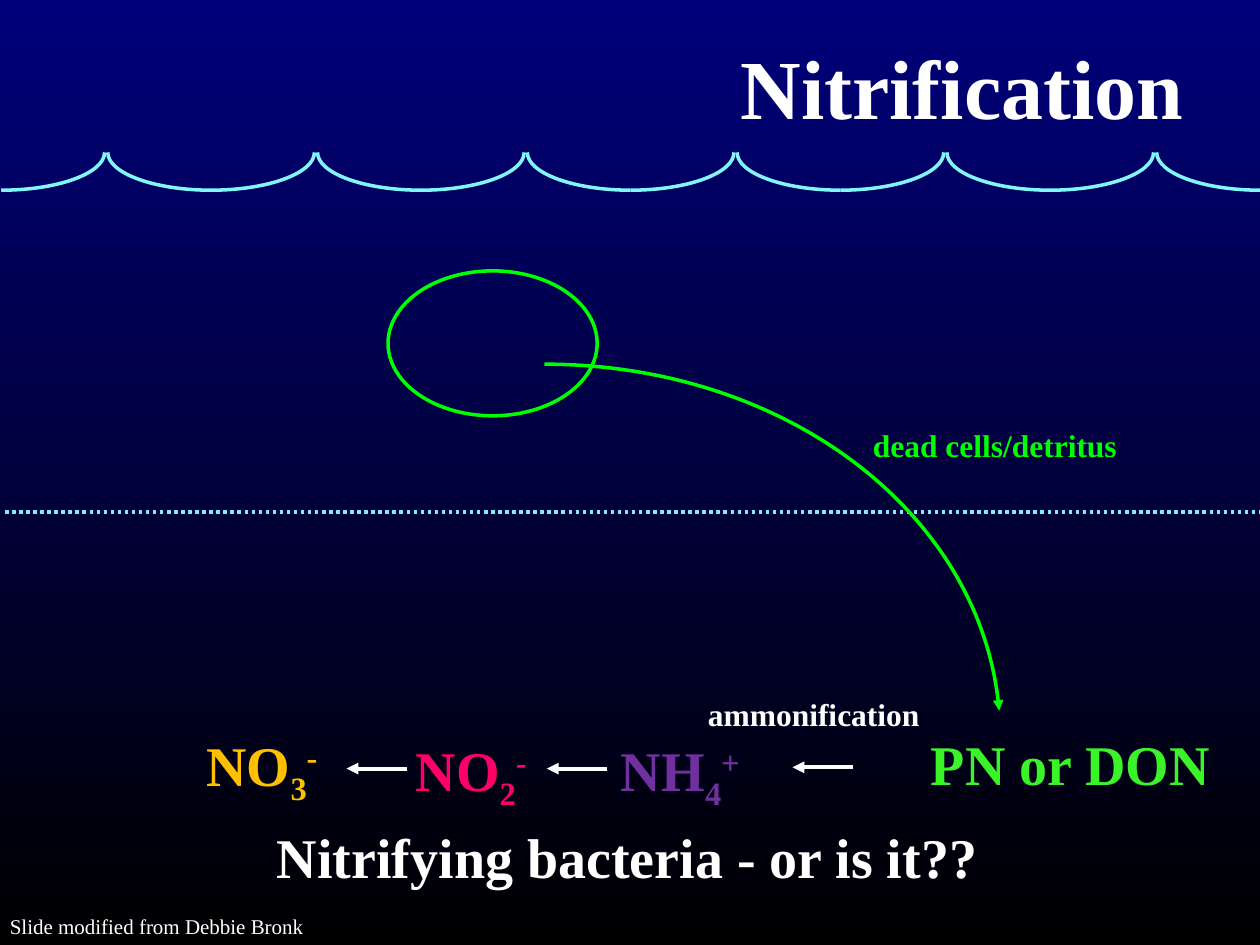
from pptx import Presentation
from pptx.dml.color import RGBColor
from pptx.enum.dml import MSO_LINE_DASH_STYLE as Dash
from pptx.enum.shapes import MSO_CONNECTOR_TYPE as Connector, MSO_SHAPE as Shape
from pptx.enum.text import MSO_AUTO_SIZE as AutoSize
from pptx.oxml.ns import qn
from pptx.util import Inches, Pt
from lxml.etree import SubElement

SLIDE_WIDTH, SLIDE_HEIGHT = Inches(10), Inches(7.5)
COLUMN = SLIDE_WIDTH / 100
ROW = SLIDE_HEIGHT / 75
WAVES = 6
ROUNDNESS = 0.55  # Bézier handle length for a quarter ellipse

FONT = "Times New Roman"
NAVY = RGBColor(0x00, 0x00, 0x7A)
BLACK = RGBColor(0x00, 0x00, 0x00)
WHITE = RGBColor(0xFF, 0xFF, 0xFF)
FOAM = RGBColor(0x81, 0xF6, 0xFF)
AQUA = RGBColor(0x7C, 0xEE, 0xFA)
GREEN = RGBColor(0x00, 0xFF, 0x00)
LEAF = RGBColor(0x3B, 0xF3, 0x29)
GOLD = RGBColor(0xFF, 0xC0, 0x00)
PINK = RGBColor(0xFF, 0x00, 0x66)
PURPLE = RGBColor(0x70, 0x30, 0xA0)


def across(columns):
    return round(columns * COLUMN)


def down(rows):
    return round(rows * ROW)


def paint_background(page):
    fill = page.background.fill
    fill.gradient()
    fill.gradient_angle = 270
    for stop, color, position in zip(fill.gradient_stops, (NAVY, BLACK), (0, 1)):
        stop.color.rgb = color
        stop.position = position


def style_line(shape, color, width=2, dash=None, arrow=False):
    line = shape.line
    line.color.rgb = color
    line.width = Pt(width)
    if dash:
        line.dash_style = dash
    if arrow:
        outline = shape._element.spPr.find(qn("a:ln"))
        SubElement(outline, qn("a:tailEnd"), type="triangle")


def add_line(page, start, end, color, **style):
    line = page.shapes.add_connector(
        Connector.STRAIGHT, across(start[0]), down(start[1]), across(end[0]), down(end[1]))
    style_line(line, color, **style)
    SubElement(line._element.spPr, qn("a:effectLst"))


def add_curve(page, points, color, **style):
    """Draw one Bézier curve through start, two handles and end."""
    spots = [(across(x), down(y)) for x, y in points]
    builder = page.shapes.build_freeform(*spots[0])
    builder.add_line_segments([spots[-1]], close=False)
    curve = builder.convert_to_shape()
    segment = next(curve._element.iter(qn("a:lnTo")))
    bend = segment.makeelement(qn("a:cubicBezTo"), {})
    for x, y in spots[1:]:
        SubElement(bend, qn("a:pt"), x=str(x - curve.left), y=str(y - curve.top))
    segment.getparent().replace(segment, bend)
    curve.shadow.inherit = False
    curve.fill.background()
    style_line(curve, color, **style)


def add_ellipse(page, left, top, width, height, color):
    ellipse = page.shapes.add_shape(
        Shape.OVAL, across(left), down(top), across(width), down(height))
    ellipse.shadow.inherit = False
    ellipse.fill.background()
    style_line(ellipse, color)


def add_text(page, text, left, top, width, height, *, size=32, color=WHITE,
             bold=True, wrap=False, sub="", sup=""):
    """Add a one-line label, with an optional subscript and superscript."""
    box = page.shapes.add_textbox(across(left), down(top), across(width), down(height))
    frame = box.text_frame
    frame.word_wrap = wrap
    frame.auto_size = AutoSize.SHAPE_TO_FIT_TEXT
    para = frame.paragraphs[0]
    for part, baseline in ((text, 0), (sub, -25), (sup, 30)):
        if not part:
            continue
        span = para.add_run()
        span.text = part
        font = span.font
        font.name, font.size, font.bold = FONT, Pt(size), bold
        font.color.rgb = color
        if baseline:
            span._r.get_or_add_rPr().set("baseline", str(baseline * 1000))


def add_water_surface(page, crest=12.1, depth=3, reach=8.2, pitch=16.65):
    trough = crest + depth
    for wave in range(WAVES):
        left = 0.1 + wave * pitch
        for foot, side in ((left, reach), (left + pitch, -reach)):
            tip = foot + side
            add_curve(page, [(tip, crest), (tip, crest + ROUNDNESS * depth),
                             (foot + ROUNDNESS * side, trough), (foot, trough)], FOAM)


def main():
    deck = Presentation()
    deck.slide_width, deck.slide_height = SLIDE_WIDTH, SLIDE_HEIGHT
    page = deck.slides.add_slide(deck.slide_layouts[6])
    paint_background(page)

    add_water_surface(page)
    add_line(page, (0.4, 40.65), (100, 40.65), AQUA, dash=Dash.ROUND_DOT)
    add_ellipse(page, 30.8, 21.5, 16.6, 11.5, GREEN)
    add_curve(page, [(43.2, 28.9), (62.2, 28.9), (78, 40.9), (79.3, 56.4)], GREEN, arrow=True)

    add_text(page, "Nitrifying bacteria - or is it??", 21, 64.8, 58, 6.3)
    add_text(page, "NO", 15.4, 57.5, 11.2, 6.4, color=GOLD, sub="3", sup="-")
    add_text(page, "PN or DON", 72.9, 57.4, 27.1, 6.4, color=LEAF, wrap=True)
    add_text(page, "NH", 48.3, 57.9, 11.9, 6.4, color=PURPLE, sub="4", sup="+")
    add_text(page, "NO", 32, 57.9, 11.2, 6.4, color=PINK, sub="2", sup="-")
    for tip, level in ((62.9, 60.9), (43.4, 61), (27.5, 61)):
        add_line(page, (tip + 4.8, level), (tip, level), WHITE, width=2.25, arrow=True)

    add_text(page, "Nitrification", 57.8, 2.3, 37.3, 9, size=48)
    add_text(page, "ammonification", 55.2, 54.7, 19, 4, size=18)
    add_text(page, "dead cells/detritus", 68.3, 33.3, 22, 4, size=18, color=GREEN)
    add_text(page, "Slide modified from Debbie Bronk", -0.2, 72, 25.7, 3, size=12, bold=False)
    deck.save("out.pptx")


if __name__ == "__main__":
    main()
